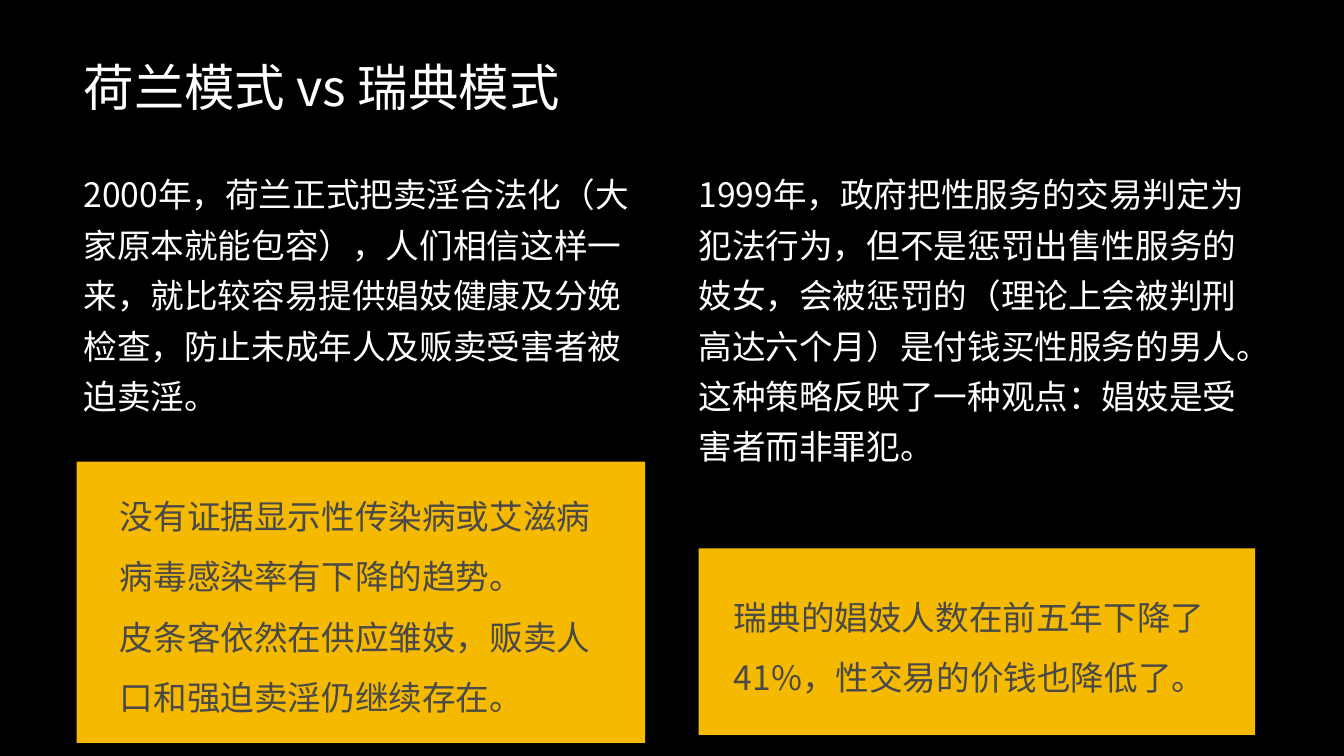
"""Build a slide comparing the Dutch and Swedish models."""
from pptx import Presentation
from pptx.dml.color import RGBColor
from pptx.enum.shapes import MSO_SHAPE
from pptx.enum.text import MSO_ANCHOR, PP_ALIGN
from pptx.oxml.ns import qn
from pptx.util import Inches, Pt

RECT = MSO_SHAPE.RECTANGLE
TOP, MIDDLE = MSO_ANCHOR.TOP, MSO_ANCHOR.MIDDLE
LEFT = PP_ALIGN.LEFT
FONT = "Noto Sans CJK SC"
BLACK, WHITE, YELLOW, GREY = "000000", "FEFFFE", "F5BA00", "494949"


def rgb(value):
    return RGBColor.from_string(value)


def write(sp, lines, size, color, spacing, anchor=TOP):
    tf = sp.text_frame
    tf.word_wrap = True
    tf.vertical_anchor = anchor
    tf.text = "\n".join(lines)
    for p in tf.paragraphs:
        p.alignment = LEFT
        p.line_spacing = spacing
        p.space_before = Pt(0)
        p.font.size = Pt(size)
        p.font.name = FONT
        p.font.color.rgb = rgb(color)
        props = p._p.pPr.find(qn("a:defRPr"))
        ea = props.makeelement(qn("a:ea"), {"typeface": FONT})
        props.find(qn("a:latin")).addnext(ea)


prs = Presentation()
prs.slide_width, prs.slide_height = Inches(13.33), Inches(7.5)
s = prs.slides.add_slide(prs.slide_layouts[5])
s.background.fill.solid()
s.background.fill.fore_color.rgb = rgb(BLACK)

title = s.shapes.title
title.left, title.top = Inches(0.73), Inches(0.39)
title.width, title.height = Inches(5.49), Inches(1)
write(title, ["荷兰模式 vs 瑞典模式"], 36, WHITE, 0.9, MIDDLE)

columns = [
    (0.73,
     "2000年，荷兰正式把卖淫合法化（大家原本就能包容），人们相信这样一来，"
     "就比较容易提供娼妓健康及分娩检查，防止未成年人及贩卖受害者被迫卖淫。"),
    (6.83,
     "1999年，政府把性服务的交易判定为犯法行为，但不是惩罚出售性服务的妓女，"
     "会被惩罚的（理论上会被判刑高达六个月）是付钱买性服务的男人。"
     "这种策略反映了一种观点：娼妓是受害者而非罪犯。"),
]
for left, text in columns:
    sp = s.shapes.add_textbox(Inches(left), Inches(1.58), Inches(5.77), Inches(4.09))
    write(sp, [text], 24, WHITE, 1.25)

results = [
    ((6.93, 5.44, 5.52, 1.85), (7.18, 5.67, 5.04, 1.55),
     ["瑞典的娼妓人数在前五年下降了41%，性交易的价钱也降低了。"]),
    ((0.76, 4.58, 5.64, 2.79), (1.09, 4.67, 5.15, 3),
     ["没有证据显示性传染病或艾滋病病毒感染率有下降的趋势。",
      "皮条客依然在供应雏妓，贩卖人口和强迫卖淫仍继续存在。"]),
]
for panel, box, lines in results:
    sp = s.shapes.add_shape(RECT, *map(Inches, panel))
    sp.shadow.inherit = False
    sp.fill.solid()
    sp.fill.fore_color.rgb = rgb(YELLOW)
    sp.line.fill.background()
    write(s.shapes.add_textbox(*map(Inches, box)), lines, 24, GREY, 1.5)

prs.save("out.pptx")
